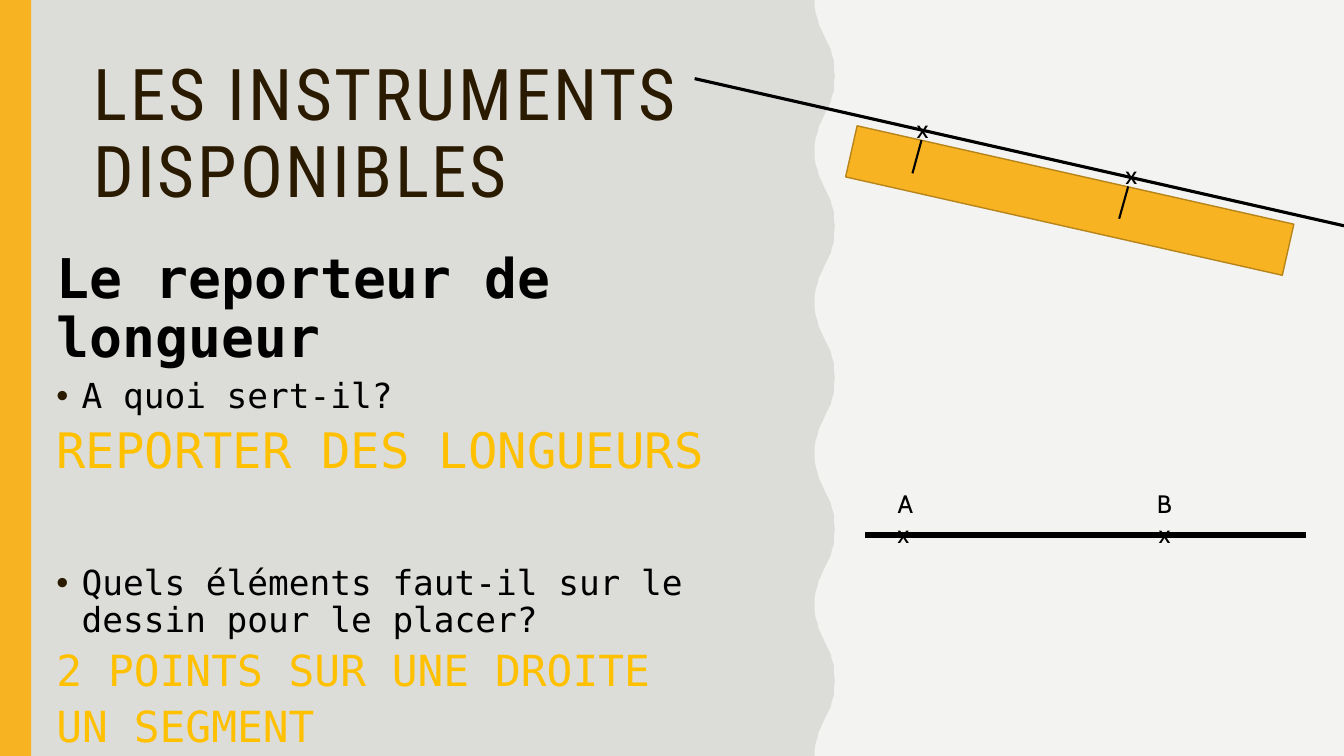
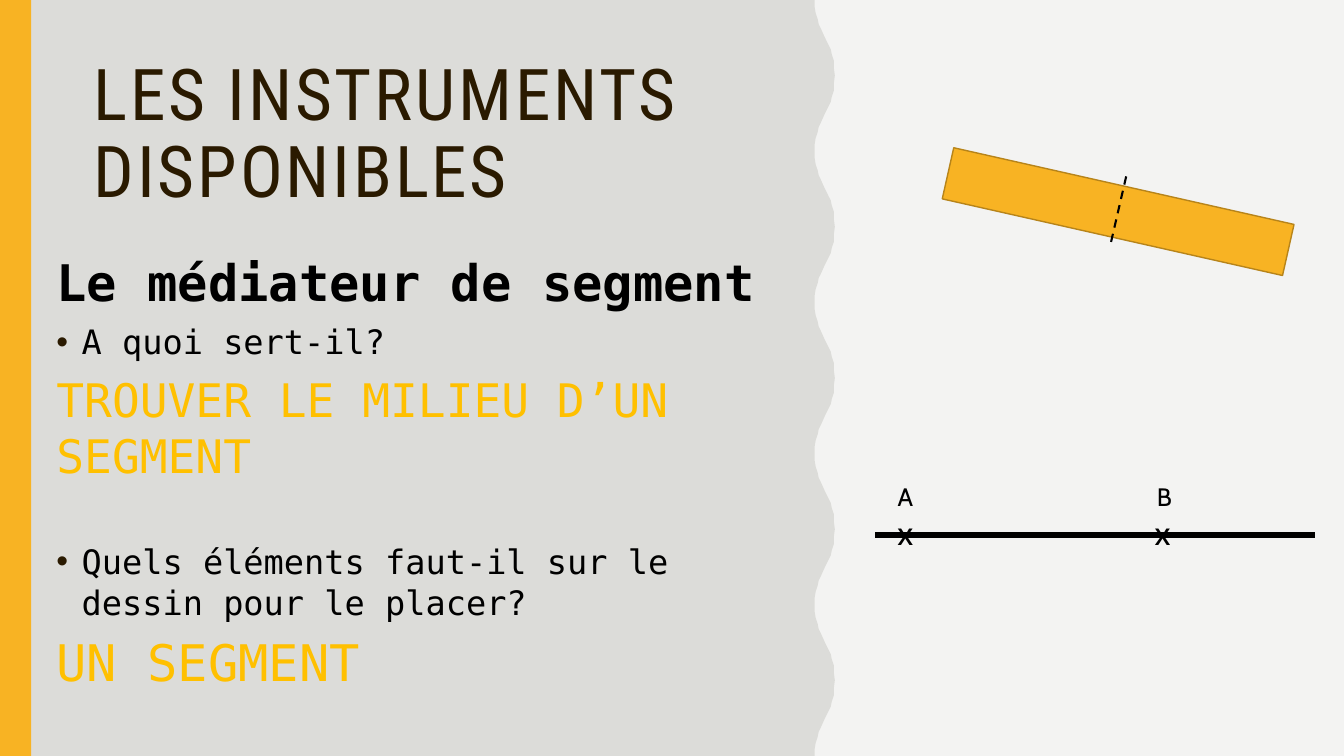
from lxml import etree
from pptx import Presentation
from pptx import util as u
from pptx.dml.color import RGBColor
from pptx.enum import dml, shapes, text
from pptx.oxml.ns import qn

HUES = {"page": "F3F3F2", "wave": "DCDCD9", "bar": "F8B323", "edge": "B7841A",
        "head": "2A1A00", "ink": "000000", "gold": "FFC000"}
FONTS = {"head": "Roboto Condensed", "body": "DejaVu Sans Mono", "mark": "Cabin"}
TITLE = "LES INSTRUMENTS DISPONIBLES"
USE = "A quoi sert-il?"
NEED = "Quels éléments faut-il sur le dessin pour le placer?"

SLIDES = [
    {"pace": 0.9,
     "body": [("name", "Le reporteur de longueur", 39.1, 0),
              ("ask", USE, 24.6, 7),
              ("reply", "REPORTER DES LONGUEURS", 34.9, 7),
              ("ask", NEED, 24.6, 62),
              ("reply", "2 POINTS SUR UNE DROITE", 30.6, 7),
              ("reply", "UN SEGMENT", 30.6, 7)],
     "strip": (8.39, 1.73, 4.44, 0.52),
     "lines": [(6.89, 0.78, 13.33, 2.24, 2.25, False),
               (11.19, 1.85, 11.1, 2.17, 1.5, False),
               (9.14, 1.39, 9.05, 1.72, 1.5, False),
               (8.58, 5.31, 12.95, 5.31, 4.5, False)],
     "marks": [("A", 8.98, 4.99, 18), ("B", 11.55, 4.99, 18),
               ("x", 8.96, 5.29, 18), ("x", 11.55, 5.29, 18),
               ("x", 9.15, 1.27, 18), ("x", 11.22, 1.73, 18)]},
    {"pace": 1.0,
     "body": [("name", "Le médiateur de segment", 36, 0),
              ("ask", USE, 24, 7),
              ("reply", "TROUVER LE MILIEU D’UN SEGMENT", 33, 7),
              ("ask", NEED, 24, 42),
              ("reply", "UN SEGMENT", 36, 7)],
     "strip": (9.36, 1.84, 3.46, 0.52),
     "lines": [(8.68, 5.31, 13.04, 5.31, 4.5, False),
               (11.17, 1.75, 11.02, 2.4, 1.5, True)],
     "marks": [("A", 8.98, 4.93, 18), ("B", 11.55, 4.93, 18),
               ("x", 8.98, 5.28, 24), ("x", 11.53, 5.28, 24)]},
]

RISE = [(0, 0), (0, 0.07), (0.01, 0.13), (0.03, 0.19), (0.04, 0.24), (0.06, 0.28),
        (0.1, 0.37), (0.14, 0.45), (0.16, 0.49), (0.17, 0.54), (0.19, 0.6),
        (0.19, 0.67), (0.2, 0.75)]
PITCH, SHORE, HIGH = 1.5, 8.08, 7.5


def hue(key):
    return RGBColor.from_string(HUES[key])


def paint(shape, fill, edge=None):
    shape.shadow.inherit = False
    shape.fill.solid()
    shape.fill.fore_color.rgb = hue(fill)
    if edge:
        shape.line.color.rgb = hue(edge)
        shape.line.width = u.Pt(1)
    else:
        shape.line.fill.background()
    return shape


def block(slide, box, fill, edge=None):
    kind = shapes.MSO_SHAPE.RECTANGLE
    return paint(slide.shapes.add_shape(kind, *map(u.Inches, box)), fill, edge)


def write(para, words, font, size, tint, bold=False):
    run = para.add_run()
    run.text = words
    run.font.name, run.font.size, run.font.bold = FONTS[font], u.Pt(size), bold
    run.font.color.rgb = hue(tint)
    return run


def wave(slide):
    cycle = RISE + [(x, PITCH - y) for x, y in RISE[-2:0:-1]]
    edge = [(SHORE + x, turn * PITCH + y)
            for turn in range(round(HIGH / PITCH)) for x, y in cycle]
    edge += [(SHORE, HIGH), (0, HIGH)]
    pen = slide.shapes.build_freeform(0, 0)
    pen.add_line_segments([(u.Inches(x), u.Inches(y)) for x, y in edge], close=True)
    return paint(pen.convert_to_shape(), "wave")


def frame(layout, slide):
    layout.background.fill.solid()
    layout.background.fill.fore_color.rgb = hue("page")
    parts = [wave(slide), block(slide, (0, 0, 0.31, HIGH), "bar")]
    for spot, part in enumerate(parts, 2):
        layout.shapes.element.insert(spot, part.element)
    for holder in list(layout.placeholders)[2:]:
        layout.shapes.element.remove(holder.element)


def place(holder, box):
    holder.left, holder.top, holder.width, holder.height = map(u.Inches, box)
    area = holder.text_frame
    area.word_wrap = True
    area.auto_size = text.MSO_AUTO_SIZE.NONE
    area.vertical_anchor = text.MSO_ANCHOR.TOP
    return area


def head(slide):
    para = place(slide.shapes.title, (0.83, 0.53, 6.93, 1.79)).paragraphs[0]
    para.alignment = text.PP_ALIGN.LEFT
    para.line_spacing = 0.9
    run = write(para, TITLE, "head", 51, "head")
    run._r.get_or_add_rPr().set("spc", "200")


def bullet(para, shown):
    props = para._p.get_or_add_pPr()
    inset = u.Inches(0.25) if shown else 0
    props.set("marL", str(inset))
    props.set("indent", str(-inset))
    if shown:
        tint = etree.SubElement(props, qn("a:buClr"))
        etree.SubElement(tint, qn("a:srgbClr"), val=HUES["head"])
        etree.SubElement(props, qn("a:buFont"), typeface="Arial")
        etree.SubElement(props, qn("a:buChar"), char="•")
    else:
        etree.SubElement(props, qn("a:buNone"))


def body(slide, rows, pace):
    area = place(slide.placeholders[1], (0.46, 2.44, 7.48, 4.95))
    for row, (role, words, size, gap) in enumerate(rows):
        para = area.add_paragraph() if row else area.paragraphs[0]
        bullet(para, role == "ask")
        para.line_spacing = pace
        para.space_before = u.Pt(gap)
        tint = "gold" if role == "reply" else "ink"
        write(para, words, "body", size, tint, role == "name")


def rule(slide, x1, y1, x2, y2, width, dashed):
    ends = map(u.Inches, (x1, y1, x2, y2))
    line = slide.shapes.add_connector(shapes.MSO_CONNECTOR.STRAIGHT, *ends)
    line.line.color.rgb = hue("ink")
    line.line.width = u.Pt(width)
    if dashed:
        line.line.dash_style = dml.MSO_LINE.DASH
    etree.SubElement(line.element.spPr, qn("a:effectLst"))


def mark(slide, sign, x, y, size):
    wide, tall = 0.36, 0.4
    box = (x - wide / 2, y - tall / 2, wide, tall)
    area = slide.shapes.add_textbox(*map(u.Inches, box)).text_frame
    area.word_wrap = True
    area.vertical_anchor = text.MSO_ANCHOR.MIDDLE
    area.margin_left = area.margin_right = area.margin_top = area.margin_bottom = 0
    area.paragraphs[0].alignment = text.PP_ALIGN.CENTER
    write(area.paragraphs[0], sign, "mark", size, "ink")


def main():
    deck = Presentation()
    deck.slide_width, deck.slide_height = u.Inches(13.33), u.Inches(HIGH)
    layout = deck.slide_layouts[1]
    for count, data in enumerate(SLIDES):
        slide = deck.slides.add_slide(layout)
        if count == 0:
            frame(layout, slide)
        head(slide)
        body(slide, data["body"], data["pace"])
        block(slide, data["strip"], "bar", "edge").rotation = 12.7
        for line in data["lines"]:
            rule(slide, *line)
        for sign in data["marks"]:
            mark(slide, *sign)
    deck.save("out.pptx")


if __name__ == "__main__":
    main()
